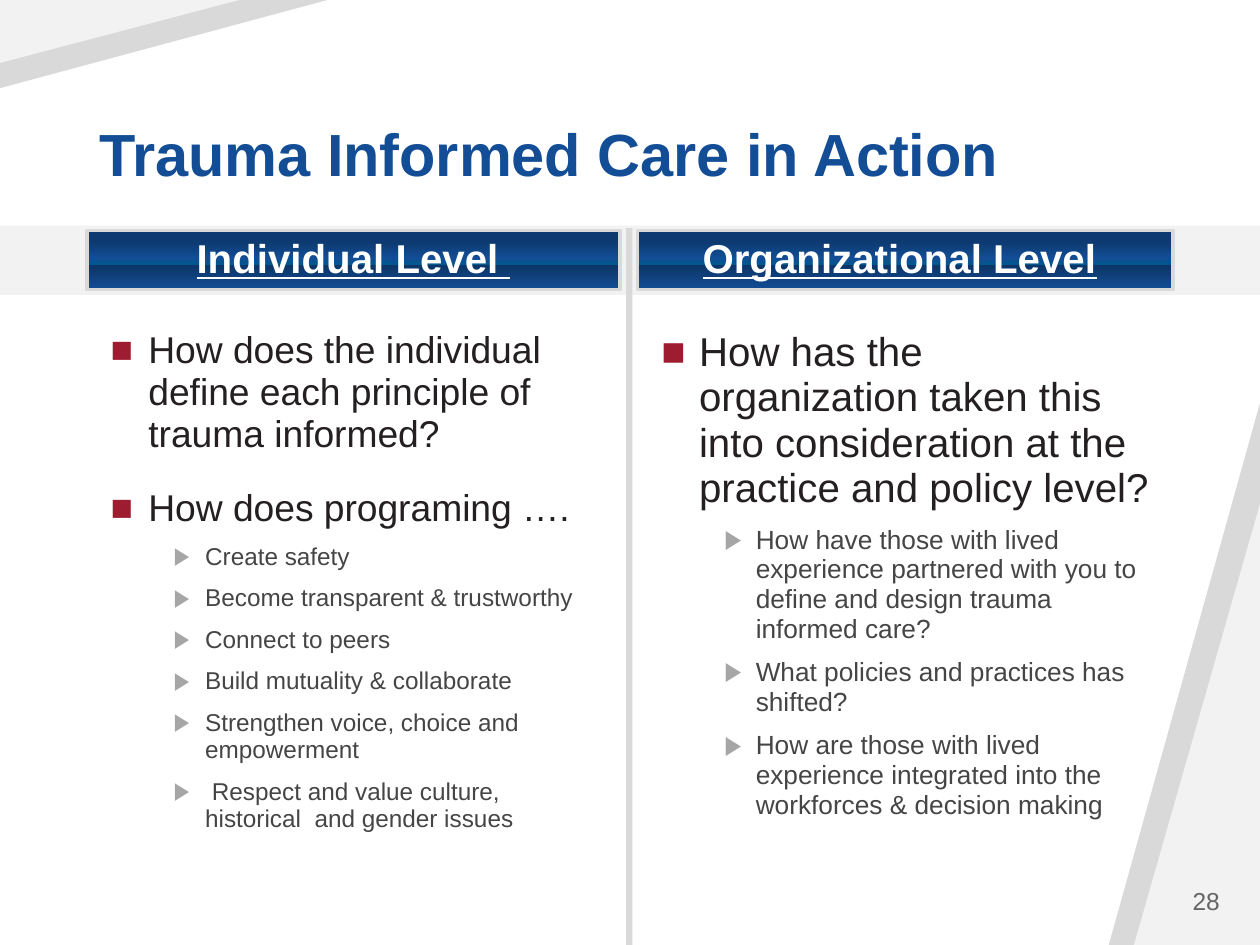
from collections import namedtuple
from lxml.etree import SubElement
from pptx import Presentation
from pptx.dml.color import RGBColor
from pptx.enum.shapes import MSO_SHAPE
from pptx.enum.text import MSO_ANCHOR, PP_ALIGN
from pptx.oxml.ns import qn
from pptx.util import Inches, Pt

COLOURS = {
    "pale": "F2F2F2", "grey": "D9D9D9", "title": "124D95", "white": "FFFFFF",
    "question": "242021", "detail": "454545", "square": "9E1C30",
    "arrow": "A6A6A6", "number": "646464",
}
BANNER_STOPS = [(19, "0D3A70"), (47, "124D95"), (58, "00588F"),
                (59, "0D3668"), (100, "124D95")]
FONT = "Arial"
COLUMNS, ROWS = 100, 75
CELL = Inches(0.1)

# Left, top, width and height in grid columns and rows
Box = namedtuple("Box", "left top width height")

LEVELS = [
    {"mark": "■", "mark_colour": "square", "colour": "question",
     "margin": 0.3, "hang": 0.3, "before": 18},
    {"mark": "▶", "mark_colour": "arrow", "colour": "detail",
     "margin": 0.75, "hang": 0.25, "before": 8},
]
PANELS = [
    {"box": Box(6.9, 18.3, 42.3, 49.4),
     "heading": [("Individual Level ", True)],
     "sizes": (21.3, 13.9),
     "items": [
         (0, "How does the individual define each principle of trauma informed?"),
         (0, "How does programing …."),
         (1, "Create safety"),
         (1, "Become transparent & trustworthy"),
         (1, "Connect to peers"),
         (1, "Build mutuality & collaborate"),
         (1, "Strengthen voice, choice and empowerment"),
         (1, " Respect and value culture, historical  and gender issues"),
     ]},
    {"box": Box(50.6, 18.3, 42.5, 49.4),
     "heading": [("Organizational Level", True), (" ", False)],
     "sizes": (23, 15),
     "items": [
         (0, "How has the organization taken this into consideration at the "
             "practice and policy level?"),
         (1, "How have those with lived experience partnered with you to define "
             "and design trauma informed care?"),
         (1, "What policies and practices has shifted?"),
         (1, "How are those with lived experience integrated into the workforces "
             "& decision making"),
     ]},
]


def colour(name):
    return RGBColor.from_string(COLOURS[name])


def measure(box):
    return [int(value * CELL) for value in box]


def apply(target, **values):
    for name, value in values.items():
        setattr(target, name, value)


def paint(shape, name):
    shape.shadow.inherit = False
    shape.fill.solid()
    shape.fill.fore_color.rgb = colour(name)
    shape.line.fill.background()


def add_span(para, text, size, colour_name, **styles):
    span = para.add_run()
    span.text = text
    apply(span.font, name=FONT, size=Pt(size), **styles)
    span.font.color.rgb = colour(colour_name)


def add_text_box(page, box, anchor):
    frame = page.shapes.add_textbox(*measure(box)).text_frame
    apply(frame, word_wrap=True, vertical_anchor=anchor)
    return frame


def add_band(page, box, name):
    paint(page.shapes.add_shape(MSO_SHAPE.RECTANGLE, *measure(box)), name)


def add_corner(page, box, name, corner):
    """Fill the half of the box that touches the given corner."""
    right, bottom = box.left + box.width, box.top + box.height
    points = {
        "top left": [(box.left, box.top), (right, box.top), (box.left, bottom)],
        "bottom right": [(right, bottom), (right, box.top), (box.left, bottom)],
    }[corner]
    builder = page.shapes.build_freeform(*points[0], scale=CELL)
    builder.add_line_segments(points[1:], close=True)
    paint(builder.convert_to_shape(), name)


def add_backdrop(page):
    for name, width, height in [("grey", 12.3, 43), ("pale", 9.9, 34.7)]:
        box = Box(COLUMNS - width, ROWS - height, width, height)
        add_corner(page, box, name, "bottom right")
    for name, width, height in [("grey", 25.6, 7.3), ("pale", 19, 5.4)]:
        add_corner(page, Box(0, 0, width, height), name, "top left")
    add_band(page, Box(0, 17.9, COLUMNS, 5.5), "pale")
    add_band(page, Box(49.7, 18.1, 0.5, ROWS - 18.1), "grey")


def add_title(page, box):
    para = add_text_box(page, box, MSO_ANCHOR.BOTTOM).paragraphs[0]
    para.line_spacing = 0.9
    add_span(para, "Trauma Informed Care in Action", 34, "title", bold=True)


def fill_with_banner_gradient(shape):
    shape.fill.gradient()
    shape.fill.gradient_angle = 270
    stops = shape._element.spPr.find(qn("a:gradFill")).find(qn("a:gsLst"))
    for stop in list(stops):
        stops.remove(stop)
    for position, value in BANNER_STOPS:
        stop = SubElement(stops, qn("a:gs"), pos=str(position * 1000))
        SubElement(stop, qn("a:srgbClr"), val=value)


def add_banner(page, box, spans):
    shape = page.shapes.add_shape(MSO_SHAPE.RECTANGLE, *measure(box))
    shape.shadow.inherit = False
    fill_with_banner_gradient(shape)
    shape.line.color.rgb = colour("grey")
    shape.line.width = Pt(2)
    side, edge = Inches(0.05), Inches(0.06)
    apply(shape.text_frame, word_wrap=True, vertical_anchor=MSO_ANCHOR.MIDDLE,
          margin_left=side, margin_right=side, margin_top=edge, margin_bottom=edge)
    para = shape.text_frame.paragraphs[0]
    apply(para, alignment=PP_ALIGN.CENTER, line_spacing=0.9)
    for text, underline in spans:
        add_span(para, text, 23, "white", bold=True, underline=underline)


def add_bullet(para, level):
    properties = para._p.get_or_add_pPr()
    properties.set("marL", str(Inches(level["margin"])))
    properties.set("indent", str(-Inches(level["hang"])))
    tint = SubElement(properties, qn("a:buClr"))
    SubElement(tint, qn("a:srgbClr"), val=COLOURS[level["mark_colour"]])
    SubElement(properties, qn("a:buFont"), typeface=FONT)
    SubElement(properties, qn("a:buChar"), char=level["mark"])


def add_list(page, box, items, sizes):
    frame = add_text_box(page, box, MSO_ANCHOR.TOP)
    for index, (depth, text) in enumerate(items):
        para = frame.add_paragraph() if index else frame.paragraphs[0]
        level = LEVELS[depth]
        add_bullet(para, level)
        before = level["before"] if index else 0
        apply(para, level=depth, line_spacing=0.94, space_before=Pt(before))
        add_span(para, text, sizes[depth], level["colour"])


def add_panel(page, box, heading, items, sizes):
    """Place a banner at the top of the box and a list below it."""
    add_banner(page, box._replace(height=4.7), heading)
    inset, drop = 0.9, 7.4
    body = Box(box.left + inset, box.top + drop, 41, box.height - drop)
    add_list(page, body, items, sizes)


def add_page_number(page, box):
    para = add_text_box(page, box, MSO_ANCHOR.MIDDLE).paragraphs[0]
    para.alignment = PP_ALIGN.RIGHT
    add_span(para, "28", 14, "number")


def main():
    deck = Presentation()
    apply(deck, slide_width=COLUMNS * CELL, slide_height=ROWS * CELL)
    page = deck.slides.add_slide(deck.slide_layouts[6])
    add_backdrop(page)
    add_title(page, Box(6.9, 4, 86.2, 11.5))
    for panel in PANELS:
        add_panel(page, **panel)
    add_page_number(page, Box(89.6, 69.5, 8.2, 4))
    deck.save("out.pptx")


if __name__ == "__main__":
    main()
